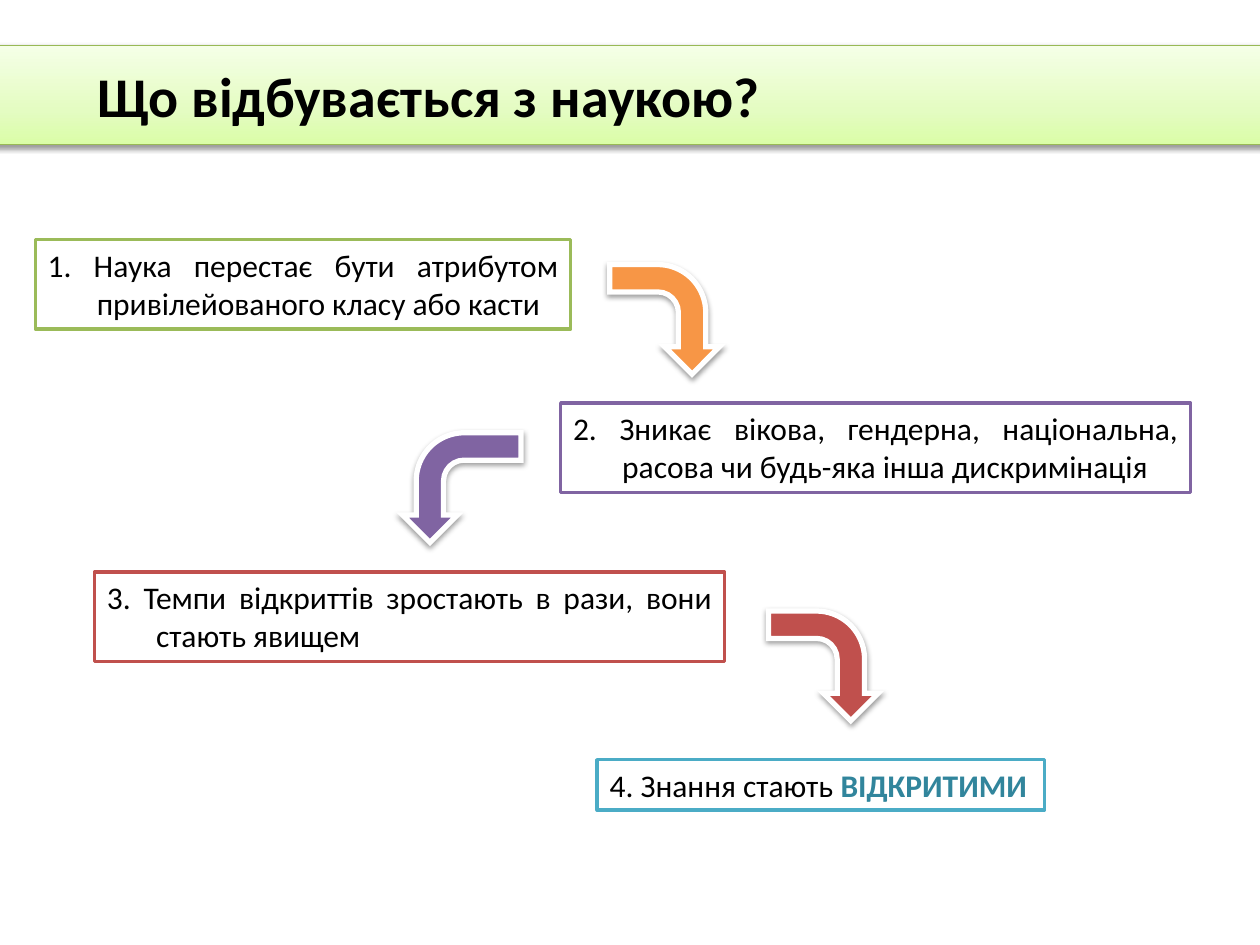
from dataclasses import dataclass

from lxml.etree import SubElement as Sub
from pptx import Presentation
from pptx.dml.color import RGBColor as Rgb
from pptx.enum.shapes import MSO_SHAPE as Kind
from pptx.enum.text import MSO_ANCHOR as Anchor, MSO_AUTO_SIZE as Auto, PP_ALIGN as Align
from pptx.oxml.ns import qn
from pptx.shapes.autoshape import Shape
from pptx.util import Inches, Pt

HEX = {
    "black": "000000", "white": "FFFFFF", "green": "9BBB59", "violet": "8064A2",
    "red": "C0504D", "aqua": "4BACC6", "teal": "31859C", "orange": "F79646",
    "rim": "98B955", "lime": "DAFDA7", "mint": "E4FCC2", "pale": "F5FFE7",
}


@dataclass
class Box:
    left: float
    top: float
    width: float
    height: float
    edge: str
    text: str
    strong: str = ""
    hang: float = 0.39
    wrap: bool = True
    anchor: Anchor = Anchor.TOP


@dataclass
class Arrow:
    left: float
    top: float
    height: float
    color: str
    flip: bool = False


BOXES = [
    Box(0.28, 1.9, 4.25, 0.71, "green",
        "1. Наука перестає бути атрибутом привілейованого класу або касти",
        anchor=Anchor.MIDDLE),
    Box(4.45, 3.2, 5, 0.71, "violet",
        "2. Зникає вікова, гендерна, національна, расова чи будь-яка інша дискримінація"),
    Box(0.75, 4.54, 5, 0.71, "red",
        "3. Темпи відкриттів зростають в рази, вони стають явищем"),
    Box(4.74, 6.03, 3.55, 0.4, "aqua", "4. Знання стають ", "ВІДКРИТИМИ",
        hang=0.5, wrap=False),
]
ARROWS = [
    Arrow(4.84, 2.1, 0.87, "orange"),
    Arrow(3.23, 3.4, 0.94, "violet", flip=True),
    Arrow(6.1, 4.85, 0.87, "red"),
]


def color(name: str) -> Rgb:
    return Rgb.from_string(HEX[name])


def apply(target, **values) -> None:
    for name, value in values.items():
        setattr(target, name, value)


def add_form(slide, kind: Kind, at: tuple, fill: str, edge: str, weight: float) -> Shape:
    form = slide.shapes.add_shape(kind, *map(Inches, at))
    form.shadow.inherit = False
    form.fill.solid()
    form.fill.fore_color.rgb = color(fill)
    form.line.color.rgb = color(edge)
    form.line.width = Pt(weight)
    return form


def add_shade(form: Shape) -> None:
    """Give the shape a soft shadow straight below it."""
    effects = form._element.spPr.find(qn("a:effectLst"))
    shade = Sub(effects, qn("a:outerShdw"), blurRad="40000", dist="20000",
                dir="5400000", rotWithShape="0")
    tint = Sub(shade, qn("a:srgbClr"), val=HEX["black"])
    Sub(tint, qn("a:alpha"), val="38000")


def add_run(para, text: str, size: int, tint: str, bold: bool = False) -> None:
    run = para.add_run()
    run.text = text
    apply(run.font, name="Calibri", size=Pt(size), bold=bold)
    run.font.color.rgb = color(tint)


def add_band(slide) -> None:
    band = add_form(slide, Kind.RECTANGLE, (-0.12, 0.36, 10.39, 0.79), "lime", "rim", 0.75)
    band.fill.gradient()
    band.fill.gradient_angle = 90
    stops = band._element.spPr.find(qn("a:gradFill")).find(qn("a:gsLst"))
    stops.clear()
    for place, name in ((0, "lime"), (35, "mint"), (100, "pale")):
        stop = Sub(stops, qn("a:gs"), pos=str(place * 1000))
        Sub(stop, qn("a:srgbClr"), val=HEX[name])
    add_shade(band)


def set_title(slide) -> None:
    title = slide.shapes.title
    apply(title, left=Inches(0.67), top=Inches(0.44), width=Inches(5.52), height=Inches(0.64))
    frame = title.text_frame
    apply(frame, word_wrap=False, auto_size=Auto.SHAPE_TO_FIT_TEXT, vertical_anchor=Anchor.TOP)
    para = frame.paragraphs[0]
    para.alignment = Align.LEFT
    add_run(para, "Що відбувається з наукою?", 32, "black", True)
    slide.shapes.element.append(title.element)  # bring in front of the band


def add_box(slide, box: Box) -> None:
    at = (box.left, box.top, box.width, box.height)
    frame = add_form(slide, Kind.RECTANGLE, at, "white", box.edge, 2).text_frame
    apply(frame, word_wrap=box.wrap, auto_size=Auto.SHAPE_TO_FIT_TEXT,
          vertical_anchor=box.anchor)
    para = frame.paragraphs[0]
    apply(para, alignment=Align.JUSTIFY, level=1, space_after=Pt(12))
    props = para._p.get_or_add_pPr()
    props.set("marL", str(Inches(box.hang)))
    props.set("indent", str(-Inches(box.hang)))
    add_run(para, box.text, 18, "black")
    if box.strong:
        add_run(para, box.strong, 18, "teal", True)


def add_arrow(slide, arrow: Arrow) -> None:
    at = (arrow.left, arrow.top, 0.87, arrow.height)
    form = add_form(slide, Kind.BENT_ARROW, at, arrow.color, "white", 3)
    form.rotation = 90
    if arrow.flip:
        form._element.spPr.find(qn("a:xfrm")).set("flipV", "1")
    Sub(form._element.spPr.find(qn("a:ln")), qn("a:miter"), lim="800000")
    add_shade(form)


def main() -> None:
    deck = Presentation()
    apply(deck, slide_width=Inches(10), slide_height=Inches(7.5))
    slide = deck.slides.add_slide(deck.slide_layouts[5])
    add_band(slide)
    set_title(slide)
    for box in BOXES:
        add_box(slide, box)
    for arrow in ARROWS:
        add_arrow(slide, arrow)
    deck.save("out.pptx")


if __name__ == "__main__":
    main()
